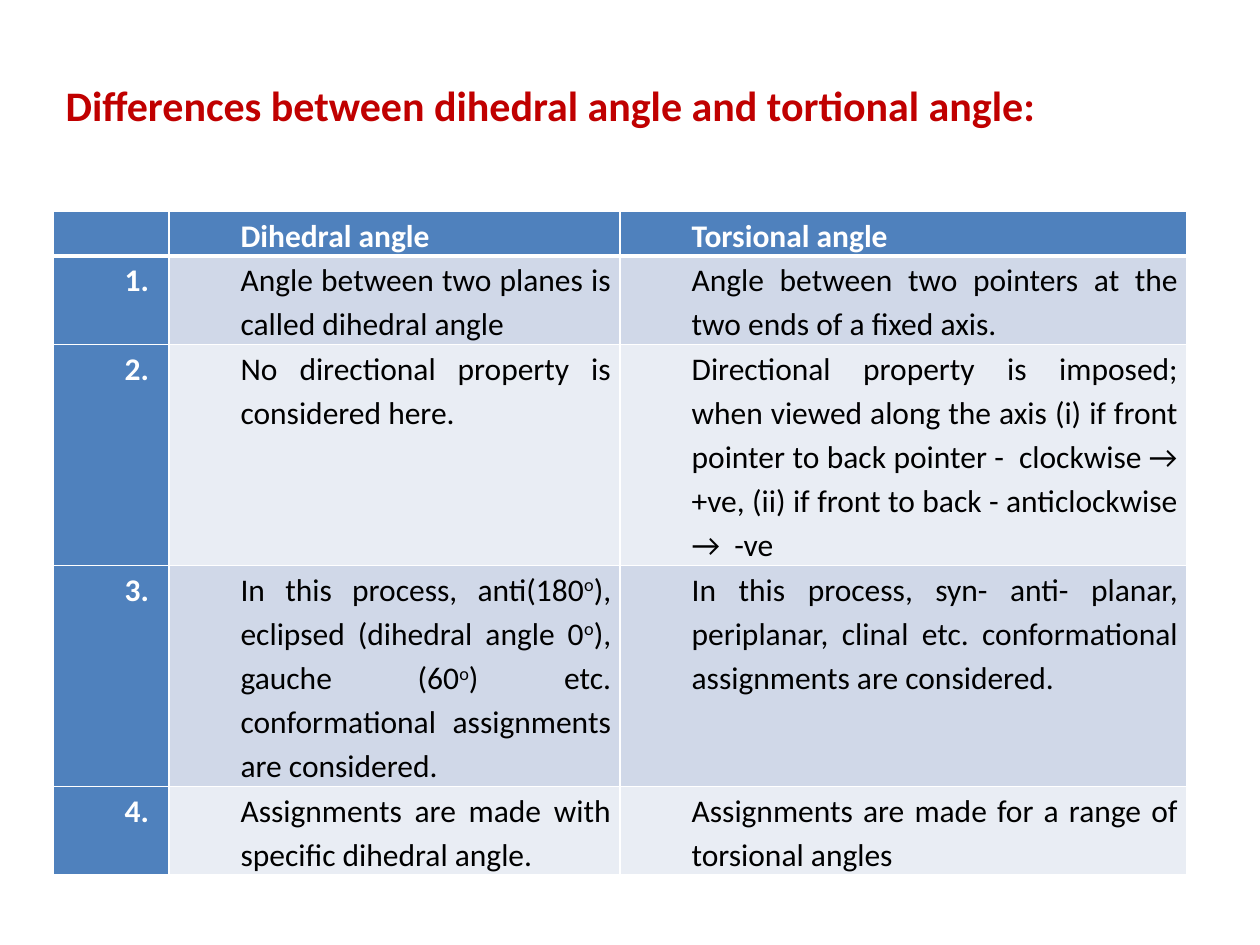
from dataclasses import dataclass

from lxml import etree
from pptx import Presentation
from pptx import util as u
from pptx.dml.color import RGBColor
from pptx.enum import text
from pptx.oxml import ns


@dataclass(frozen=True)
class Theme:
    font: str = "Calibri"
    heading: str = "C00000"
    accent: str = "4F81BD"
    bands: tuple = ("D0D8E8", "E9EDF4")
    light: str = "FFFFFF"
    dark: str = "000000"
    heading_size: int = 24
    table_size: int = 18
    line_spacing: float = 1.15
    rule: int = 1
    header_rule: int = 3


THEME = Theme()
COMPARISON = [
    ("", "Dihedral angle", "Torsional angle"),
    ("1.", "Angle between two planes is called dihedral angle",
     "Angle between two pointers at the two ends of a fixed axis."),
    ("2.", "No directional property is considered here.",
     "Directional property is imposed; when viewed along the axis (i) if front "
     "pointer to back pointer -  clockwise → +ve, (ii) if front to back - "
     "anticlockwise →  -ve"),
    ("3.", "In this process, anti(180^o^), eclipsed (dihedral angle 0^o^), "
     "gauche (60^o^) etc. conformational assignments are considered. ",
     "In this process, syn- anti- planar, periplanar, clinal etc. "
     "conformational assignments are considered."),
    ("4.", "Assignments are made with specific dihedral angle.",
     "Assignments are made for a range of torsional angles"),
]
LINES_PER_ROW = (1, 2, 5, 5, 2)
COLUMN_WIDTHS = (0.92, 3.58, 4.5)


def style_run(run, size, color, bold):
    run.font.name = THEME.font
    run.font.size = u.Pt(size)
    run.font.bold = bold
    run.font.color.rgb = RGBColor.from_string(color)


def set_border(cell, side, points):
    line = etree.SubElement(cell._tc.get_or_add_tcPr(), ns.qn(f"a:ln{side}"),
                            w=str(u.Pt(points)))
    fill = etree.SubElement(line, ns.qn("a:solidFill"))
    etree.SubElement(fill, ns.qn("a:srgbClr"), val=THEME.light)


def place_heading(slide, left, top, width, height):
    heading = slide.shapes.title
    heading.left, heading.top, heading.width, heading.height = left, top, width, height
    frame = heading.text_frame
    frame.text = "Differences between dihedral angle and tortional angle:"
    frame.word_wrap = True
    frame.auto_size = text.MSO_AUTO_SIZE.NONE
    frame.vertical_anchor = text.MSO_ANCHOR.TOP
    paragraph = frame.paragraphs[0]
    paragraph.alignment = text.PP_ALIGN.LEFT
    style_run(paragraph.runs[0], THEME.heading_size, THEME.heading, True)


def fill_cell(cell, content, row, column):
    emphasized = row == 0 or column == 0
    for side in "LRTB":
        under_header = (row, side) in ((0, "B"), (1, "T"))
        set_border(cell, side, THEME.header_rule if under_header else THEME.rule)
    cell.fill.solid()
    color = THEME.accent if emphasized else THEME.bands[(row - 1) % 2]
    cell.fill.fore_color.rgb = RGBColor.from_string(color)
    cell.margin_left = cell.margin_right = u.Inches(0.07)
    cell.margin_top = cell.margin_bottom = 0

    paragraph = cell.text_frame.paragraphs[0]
    paragraph.line_spacing = THEME.line_spacing
    paragraph.alignment = text.PP_ALIGN.JUSTIFY if column else text.PP_ALIGN.LEFT
    properties = paragraph._p.get_or_add_pPr()
    properties.set("marL", str(u.Inches(0.5)))
    properties.set("indent", "0")
    if not content:
        paragraph.font.size = u.Pt(THEME.table_size)
        return
    for index, part in enumerate(content.split("^")):
        run = paragraph.add_run()
        run.text = part
        style_run(run, THEME.table_size,
                  THEME.light if emphasized else THEME.dark, emphasized)
        if index % 2:
            run._r.get_or_add_rPr().set("baseline", "30000")


def place_comparison(slide, left, top, width, height):
    comparison = slide.shapes.add_table(
        len(COMPARISON), len(COLUMN_WIDTHS), left, top, width, height).table
    comparison.first_col = True
    for column, share in zip(comparison.columns, COLUMN_WIDTHS):
        column.width = int(width * share / sum(COLUMN_WIDTHS))
    for row, lines in zip(comparison.rows, LINES_PER_ROW):
        row.height = int(height * lines / sum(LINES_PER_ROW))
    for row, contents in enumerate(COMPARISON):
        for column, content in enumerate(contents):
            fill_cell(comparison.cell(row, column), content, row, column)


def main():
    deck = Presentation()
    deck.slide_width, deck.slide_height = u.Inches(10), u.Inches(7.5)
    slide = deck.slides.add_slide(deck.slide_layouts.get_by_name("Title Only"))
    left = u.Inches(0.42)
    place_heading(slide, left, u.Inches(0.58), u.Inches(8), u.Inches(0.5))
    place_comparison(slide, left, u.Inches(1.68), u.Inches(9), u.Inches(5.17))
    deck.save("out.pptx")


if __name__ == "__main__":
    main()
